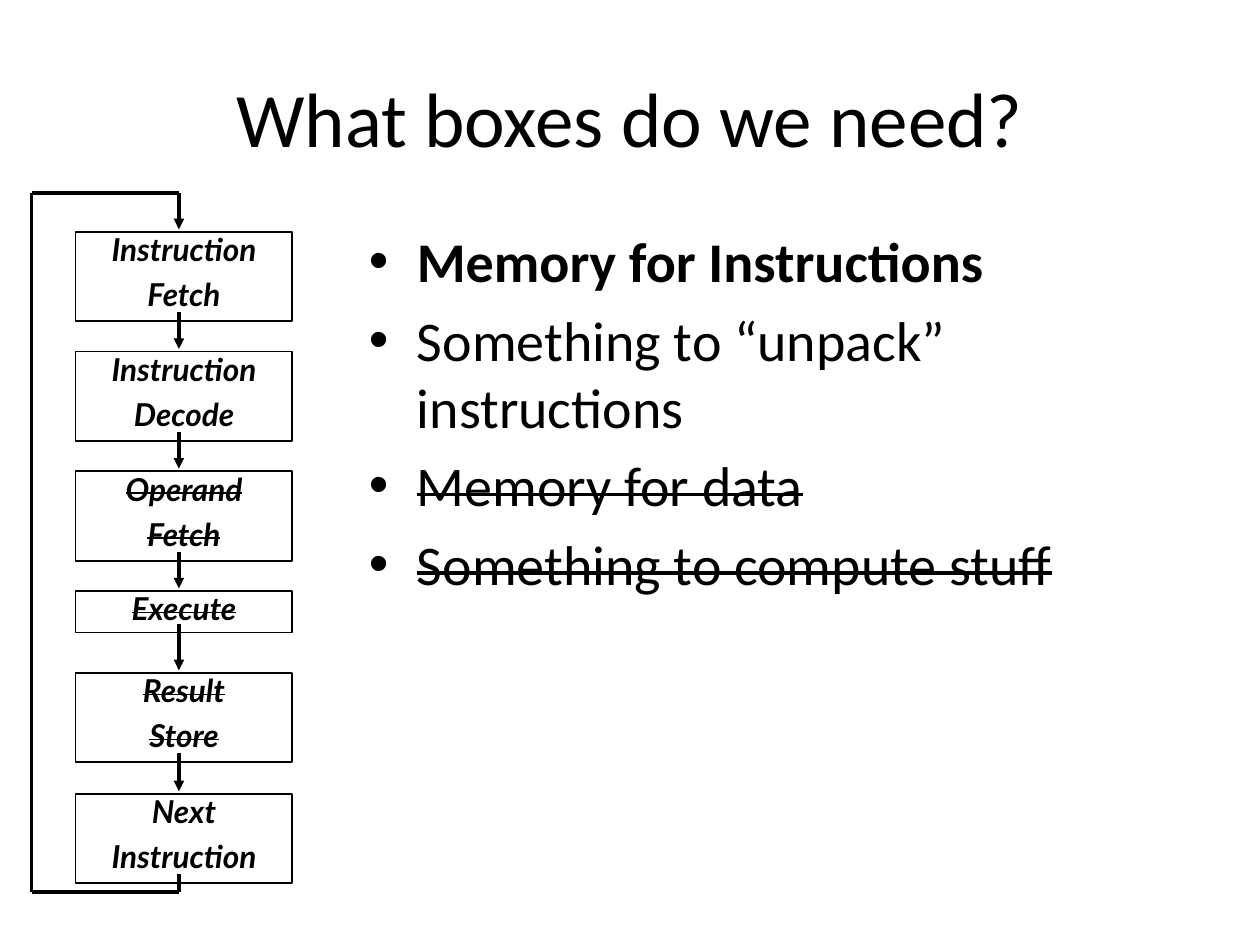
from dataclasses import dataclass

from lxml import etree
from pptx import Presentation
from pptx import util as u
from pptx.dml.color import RGBColor
from pptx.enum import shapes, text
from pptx.oxml.ns import qn


@dataclass(frozen=True)
class Theme:
    ink: RGBColor = RGBColor(0, 0, 0)
    body_font: str = "Calibri"
    box_font: str = "Lato"
    title_size: int = 44
    body_size: int = 32
    box_size: int = 18
    box_line: float = 1
    arrow_line: float = 2
    indent: float = 0.38


class Deck:
    """Draws styled elements on the current slide."""

    def __init__(self, theme):
        self.t = theme
        self.prs = Presentation()
        self.prs.slide_width, self.prs.slide_height = u.Inches(10), u.Inches(7.5)
        self.s = self.prs.slides.add_slide(self.prs.slide_layouts[6])

    def frame(self, sp, fmt):
        for name, value in {"word_wrap": True, **fmt}.items():
            setattr(sp.text_frame, name, value)
        return sp.text_frame

    def para(self, tf, i, words, font, fmt, strike=False, bullet=None, hang=True):
        p = tf.paragraphs[0] if i == 0 else tf.add_paragraph()
        for name, value in fmt.items():
            setattr(p, name, value)
        if hang:
            pPr = p._p.get_or_add_pPr()
            pPr.set("marL", str(u.Inches(self.t.indent)))
            pPr.set("indent", str(-u.Inches(self.t.indent)))
            if bullet:
                etree.SubElement(pPr, qn("a:buFont")).set("typeface", "Arial")
                etree.SubElement(pPr, qn("a:buChar")).set("char", bullet)
        r = p.add_run()
        r.text = words
        for name, value in font.items():
            setattr(r.font, name, value)
        r.font.color.rgb = self.t.ink
        if strike:
            r._r.get_or_add_rPr().set("strike", "sngStrike")

    def title(self, at, words):
        sp = self.s.shapes.add_textbox(*map(u.Inches, at))
        tf = self.frame(sp, {"vertical_anchor": text.MSO_ANCHOR.MIDDLE})
        font = {"name": self.t.body_font, "size": u.Pt(self.t.title_size)}
        self.para(tf, 0, words, font, {"alignment": text.PP_ALIGN.CENTER}, hang=False)

    def bullets(self, at, items):
        tf = self.frame(self.s.shapes.add_textbox(*map(u.Inches, at)), {})
        fmt = {"space_before": u.Pt(0.2 * self.t.body_size)}
        for i, (words, bold, strike) in enumerate(items):
            font = {"name": self.t.body_font, "size": u.Pt(self.t.body_size), "bold": bold}
            self.para(tf, i, words, font, fmt, strike, "•")

    def box(self, at, lines, strike):
        sp = self.s.shapes.add_shape(shapes.MSO_SHAPE.RECTANGLE, *map(u.Inches, at))
        sp.shadow.inherit = False
        sp.fill.background()
        sp.line.color.rgb = self.t.ink
        sp.line.width = u.Pt(self.t.box_line)
        tf = self.frame(sp, {
            "margin_left": u.Inches(0.07), "margin_right": u.Inches(0.07),
            "margin_top": u.Inches(0.03), "margin_bottom": u.Inches(0.03),
            "vertical_anchor": text.MSO_ANCHOR.TOP,
            "auto_size": text.MSO_AUTO_SIZE.SHAPE_TO_FIT_TEXT})
        font = {"name": self.t.box_font, "size": u.Pt(self.t.box_size),
                "bold": True, "italic": True}
        fmt = {"alignment": text.PP_ALIGN.CENTER, "line_spacing": 0.86,
               "space_before": u.Pt(0.4 * self.t.box_size)}
        for i, words in enumerate(lines):
            self.para(tf, i, words, font, fmt, strike)

    def line(self, start, end, arrow=False):
        sp = self.s.shapes.add_connector(
            shapes.MSO_CONNECTOR.STRAIGHT, *map(u.Inches, (*start, *end)))
        sp.line.color.rgb = self.t.ink
        sp.line.width = u.Pt(self.t.arrow_line)
        if arrow:
            etree.SubElement(sp.line._get_or_add_ln(), qn("a:tailEnd")).set("type", "triangle")
        etree.SubElement(sp._element.spPr, qn("a:effectLst"))


def main():
    deck = Deck(Theme())
    deck.title((0.5, 0.3, 9, 1.25), "What boxes do we need?")
    deck.bullets((2.83, 1.75, 6.67, 4.95), [
        ("Memory for Instructions", True, False),
        ("Something to “unpack” instructions", False, False),
        ("Memory for data", False, True),
        ("Something to compute stuff", False, True)])

    stages = [
        (1.84, ["Instruction", "Fetch"], False),
        (2.79, ["Instruction", "Decode"], False),
        (3.74, ["Operand", "Fetch"], True),
        (4.69, ["Execute"], True),
        (5.34, ["Result", "Store"], True),
        (6.3, ["Next", "Instruction"], False)]
    heights = {1: 0.33, 2: 0.71}
    for top, lines, strike in stages:
        deck.box((0.6, top, 1.72, heights[len(lines)]), lines, strike)

    flow_x, loop_x, loop_top, loop_bottom = 1.42, 0.25, 1.53, 7.08
    exits = [top + heights[len(lines)] - 0.07 for top, lines, _ in stages]
    entries = [top - 0.02 for top, _, _ in stages]
    for start, end in zip([loop_top] + exits, entries):
        deck.line((flow_x, start), (flow_x, end), arrow=True)
    loop = [(flow_x, exits[-1]), (flow_x, loop_bottom), (loop_x, loop_bottom),
            (loop_x, loop_top), (flow_x, loop_top)]
    for start, end in zip(loop, loop[1:]):
        deck.line(start, end)
    deck.prs.save("out.pptx")


if __name__ == "__main__":
    main()
